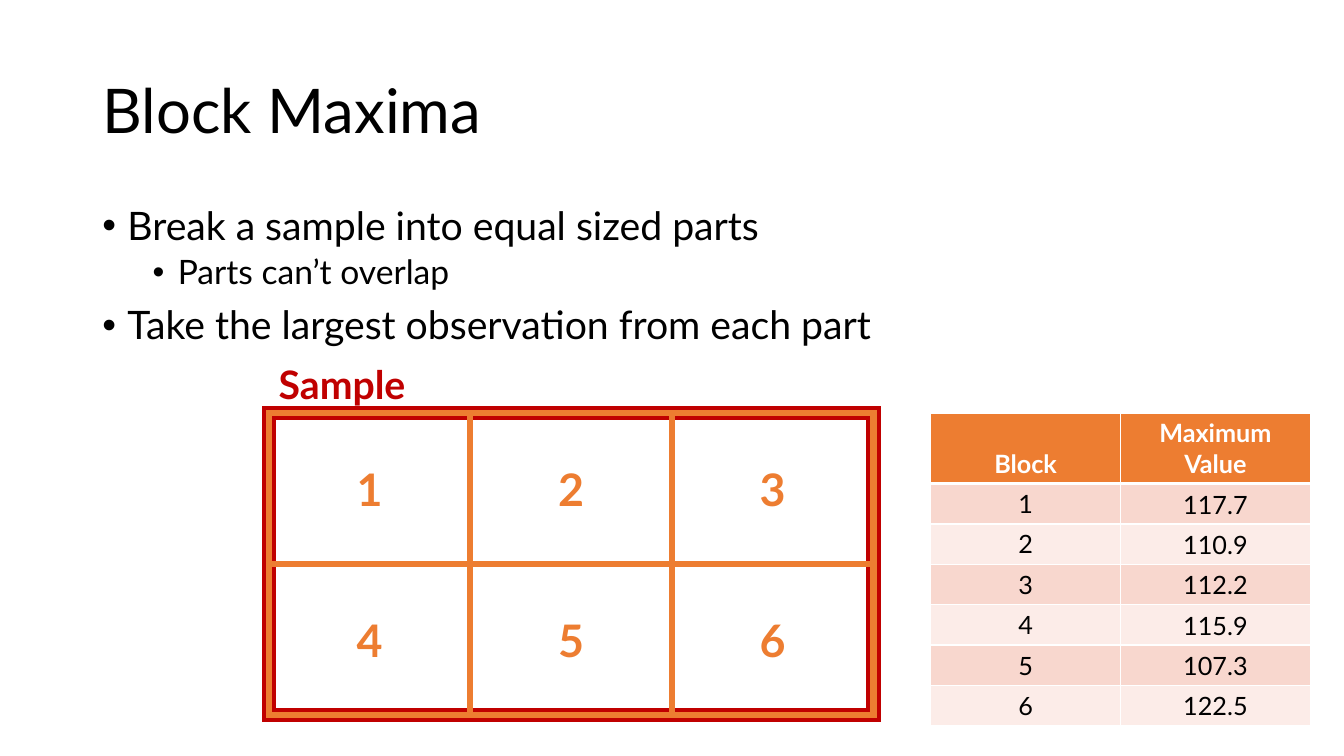
from lxml import etree
from pptx import Presentation
from pptx.dml.color import RGBColor
from pptx.enum import shapes, text
from pptx.oxml.ns import qn
from pptx.util import Pt

FONT = "Lato"
BLACK, WHITE, RED, ORANGE = "000000", "FFFFFF", "C00000", "ED7D31"
BANDS = ("F8D7CE", "FCECE8")
MAXIMA = ("117.7", "110.9", "112.2", "115.9", "107.3", "122.5")
BULLETS = (
    ("Break a sample into equal sized parts", 0),
    ("Parts can’t overlap", 1),
    ("Take the largest observation from each part", 0),
)


def colour(value):
    """Turn a hex string into a colour."""
    return RGBColor.from_string(value)


def write(para, words, size=18, fill=BLACK, bold=False, align="LEFT"):
    """Put formatted words into a paragraph."""
    para.alignment = text.PP_ALIGN[align]
    span = para.add_run()
    span.text = words
    span.font.name = FONT
    span.font.size = Pt(size)
    span.font.bold = bold
    span.font.color.rgb = colour(fill)


def add_title(page, box, words):
    """Place the title placeholder in the box and fill it."""
    title = page.shapes.title
    title.left, title.top, title.width, title.height = map(Pt, box)
    frame = title.text_frame
    frame.auto_size = text.MSO_AUTO_SIZE.NONE
    frame.vertical_anchor = text.MSO_ANCHOR.MIDDLE
    frame.paragraphs[0].line_spacing = 0.9
    write(frame.paragraphs[0], words, size=44)


def add_bullets(page, box, items):
    """Write a two-level bullet list in the box."""
    frame = page.shapes.add_textbox(*map(Pt, box)).text_frame
    frame.word_wrap = True
    for index, (words, level) in enumerate(items):
        para = frame.add_paragraph() if index else frame.paragraphs[0]
        para.level = level
        para.line_spacing = 0.9
        para.space_before = Pt((10 - 5 * level) if index else 0)
        properties = para._p.get_or_add_pPr()
        properties.set("marL", str(Pt(18 + 36 * level)))
        properties.set("indent", str(Pt(-18)))
        etree.SubElement(properties, qn("a:buFont"), typeface="Arial")
        etree.SubElement(properties, qn("a:buChar"), char="•")
        write(para, words, size=28 - 4 * level)


def add_frame(page, box, line, weight):
    """Draw an unfilled rectangle with square corners."""
    frame = page.shapes.add_shape(shapes.MSO_SHAPE.RECTANGLE, *map(Pt, box))
    frame.shadow.inherit = False
    frame.fill.background()
    frame.line.color.rgb = colour(line)
    frame.line.width = Pt(weight)
    outline = frame.element.spPr.find(qn("a:ln"))
    etree.SubElement(outline, qn("a:miter"), lim="800000")
    return frame


def add_sample(page, box, columns=3, rows=2):
    """Draw the labelled sample split into numbered blocks."""
    left, top, width, height = box
    add_frame(page, box, RED, 10)
    label = page.shapes.add_textbox(Pt(left), Pt(top - 41), Pt(139), Pt(41))
    label.text_frame.word_wrap = True
    write(label.text_frame.paragraphs[0], "Sample", size=28, fill=RED, bold=True)
    across, down = width / columns, height / rows
    for index in range(columns * rows):
        row, column = divmod(index, columns)
        place = (left + column * across, top + row * down, across, down)
        block = add_frame(page, place, ORANGE, 4.5).text_frame
        block.vertical_anchor = text.MSO_ANCHOR.MIDDLE
        write(block.paragraphs[0], str(index + 1), size=32, fill=ORANGE,
              bold=True, align="CENTER")


def add_borders(cell, bottom):
    """Give a cell white borders, the lower one of its own weight."""
    properties = cell._tc.get_or_add_tcPr()
    for index, (side, weight) in enumerate(zip("LRTB", (1, 1, 1, bottom))):
        line = etree.Element(qn(f"a:ln{side}"), w=str(Pt(weight)))
        fill = etree.SubElement(line, qn("a:solidFill"))
        etree.SubElement(fill, qn("a:srgbClr"), val=WHITE)
        properties.insert(index, line)


def add_maxima(page, box, values):
    """Tabulate the maximum value of each block."""
    records = [("Block", "Maximum Value")]
    records += [(str(number), value) for number, value in enumerate(values, 1)]
    table = page.shapes.add_table(len(records), 2, *map(Pt, box)).table
    for index, record in enumerate(records):
        header = index == 0
        table.rows[index].height = Pt(50.4 if header else 28.8)
        for column, words in enumerate(record):
            cell = table.cell(index, column)
            cell.fill.solid()
            cell.fill.fore_color.rgb = colour(ORANGE if header else BANDS[(index - 1) % 2])
            cell.vertical_anchor = text.MSO_ANCHOR.BOTTOM if header else text.MSO_ANCHOR.MIDDLE
            if column and not header:
                cell.margin_left = cell.margin_right = cell.margin_top = Pt(0.75)
                cell.margin_bottom = Pt(0)
            add_borders(cell, bottom=3 if header else 1)
            write(cell.text_frame.paragraphs[0], words, bold=header,
                  fill=WHITE if header else BLACK, align="CENTER")


def main():
    """Build the slide and save it."""
    deck = Presentation()
    deck.slide_width, deck.slide_height = Pt(960), Pt(540)
    page = deck.slides.add_slide(deck.slide_layouts.get_by_name("Title Only"))
    add_title(page, (66, 28.75, 828, 104.4), "Block Maxima")
    add_bullets(page, (66, 143.75, 828, 342.6), BULLETS)
    add_sample(page, (192, 295, 432, 216))
    add_maxima(page, (664.8, 295, 271.2, 223.2), MAXIMA)
    deck.save("out.pptx")


if __name__ == "__main__":
    main()
